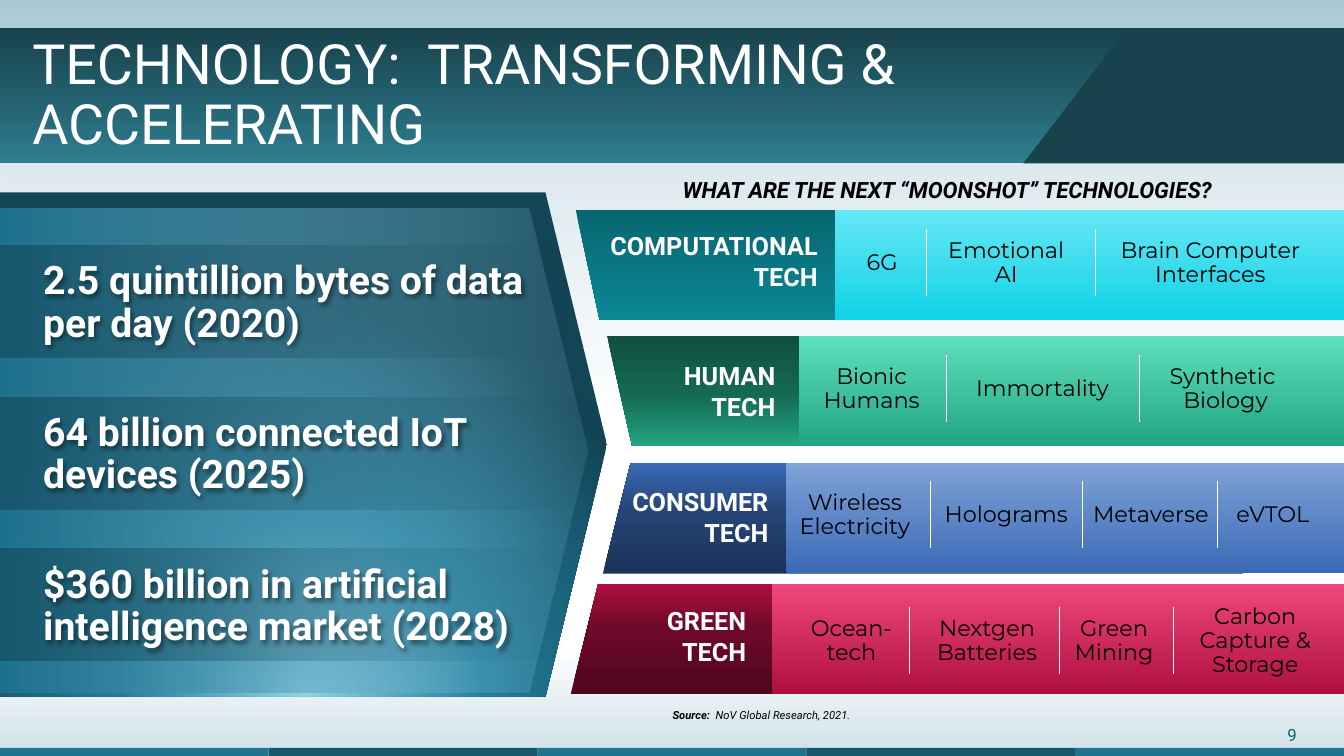
from dataclasses import dataclass

from lxml import etree
from pptx import Presentation
from pptx.dml.color import RGBColor
from pptx.enum import shapes, text
from pptx.oxml.ns import qn
from pptx.util import Inches, Pt

SHAPE = shapes.MSO_SHAPE
ALIGN = text.PP_ALIGN
ANCHOR = text.MSO_ANCHOR
WIDTH, HEIGHT = 13.33, 7.5


@dataclass(frozen=True)
class Theme:
    heading_font: str = "Roboto"
    idea_font: str = "Montserrat"
    white: str = "FFFFFF"
    black: str = "000000"
    accent: str = "086670"
    blue: str = "207390"
    deep_blue: str = "18566C"
    sky: str = "92D1E7"
    ocean: str = "237E9E"
    navy: str = "134556"
    stripe: str = "103A48"
    slate: str = "18424C"
    teal: str = "2E7D8F"
    title_size: float = 39.6
    fact_size: float = 28
    label_size: float = 18
    idea_size: float = 16
    number_size: float = 12
    source_size: float = 8


class SlideBuilder:
    def __init__(self, slide, theme):
        self.slide = slide
        self.theme = theme

    def paint(self, shape, fill, angle=270, focus=None):
        """Fill with one colour, or with (position, colour, opacity) stops."""
        shape.shadow.inherit = False
        shape.line.fill.background()
        if isinstance(fill, str):
            shape.fill.solid()
            shape.fill.fore_color.rgb = RGBColor.from_string(fill)
            return shape
        shape.fill.gradient()
        gradient = shape._element.spPr.find(qn("a:gradFill"))
        for child in list(gradient):
            gradient.remove(child)
        stops = etree.SubElement(gradient, qn("a:gsLst"))
        for position, color, *opacity in fill:
            stop = etree.SubElement(stops, qn("a:gs"), pos=str(position * 1000))
            value = etree.SubElement(stop, qn("a:srgbClr"), val=color)
            if opacity:
                etree.SubElement(value, qn("a:alpha"), val=str(opacity[0] * 1000))
        if focus:
            circle = etree.SubElement(gradient, qn("a:path"), path="circle")
            sides = {side: str(share * 1000) for side, share in zip("ltrb", focus)}
            etree.SubElement(circle, qn("a:fillToRect"), **sides)
        else:
            etree.SubElement(gradient, qn("a:lin"), ang=str(angle * 60000), scaled="0")
        return shape

    def block(self, kind, left, top, width, height, fill, adjust=None, flip=False, **gradient):
        shape = self.slide.shapes.add_shape(
            kind, Inches(left), Inches(top), Inches(width), Inches(height))
        if adjust is not None:
            shape.adjustments[0] = adjust
        if flip:
            shape._element.spPr.find(qn("a:xfrm")).set("flipV", "1")
        return self.paint(shape, fill, **gradient)

    def outline(self, points, fill):
        (left, top), *rest = [(Inches(x), Inches(y)) for x, y in points]
        builder = self.slide.shapes.build_freeform(left, top)
        builder.add_line_segments(rest, close=True)
        return self.paint(builder.convert_to_shape(), fill)

    def format(self, paragraph, size, color, font=None, bold=False, italic=False,
               align=ALIGN.LEFT, spacing=None, before=0):
        paragraph.alignment = align
        paragraph.space_before = Pt(before)
        if spacing:
            paragraph.line_spacing = spacing
        paragraph.font.name = font or self.theme.heading_font
        paragraph.font.size = Pt(size)
        paragraph.font.bold = bold
        paragraph.font.italic = italic
        paragraph.font.color.rgb = RGBColor.from_string(color)

    def text(self, left, top, width, height, lines, size, color, wrap=False,
             anchor=ANCHOR.TOP, inset=0.1, **style):
        box = self.slide.shapes.add_textbox(
            Inches(left), Inches(top), Inches(width), Inches(height))
        frame = box.text_frame
        frame.word_wrap = wrap
        frame.vertical_anchor = anchor
        frame.margin_left = Inches(inset)
        for index, line in enumerate(lines):
            paragraph = frame.paragraphs[0] if index == 0 else frame.add_paragraph()
            paragraph.text = line.replace("\n", "\v")
            self.format(paragraph, size, color, **style)
        return box

    def title(self, words, left, top, width, height):
        title = self.slide.shapes.title
        title.left, title.top = Inches(left), Inches(top)
        title.width, title.height = Inches(width), Inches(height)
        frame = title.text_frame
        frame.text = words
        frame.word_wrap = True
        frame.auto_size = text.MSO_AUTO_SIZE.NONE
        frame.vertical_anchor = ANCHOR.MIDDLE
        self.format(frame.paragraphs[0], self.theme.title_size, self.theme.white, spacing=0.9)
        # Bring the title in front of the banner
        title._element.getparent().append(title._element)

    def divider(self, x, top, height):
        line = self.slide.shapes.add_connector(
            shapes.MSO_CONNECTOR.STRAIGHT, Inches(x), Inches(top), Inches(x), Inches(top + height))
        line.line.color.rgb = RGBColor.from_string(self.theme.white)
        line.line.width = Pt(0.5)
        etree.SubElement(line._element.spPr, qn("a:effectLst"))

    def cast_text_shadow(self, box):
        effects = etree.SubElement(box._element.spPr, qn("a:effectLst"))
        shadow = etree.SubElement(effects, qn("a:outerShdw"), blurRad="38100", dist="38100",
                                  dir="2700000", algn="tl")
        color = etree.SubElement(shadow, qn("a:srgbClr"), val=self.theme.black)
        etree.SubElement(color, qn("a:alpha"), val="43000")


FACTS = [
    "2.5 quintillion bytes of data per day (2020)",
    "64 billion connected IoT devices (2025)",
    "$360 billion in artificial intelligence market (2028)",
]

# tab: left, top, width, adjustment, flipped; label: left, top, width; ideas: text, left, width
ROWS = [
    dict(tab=(5.71, 2.08, 7.11, 0.217, True), tab_fill=[(0, "086670"), (100, "0A8895")],
         label=("COMPUTATIONAL\nTECH", 5.88, 2.24, 2.33),
         band=8.28, band_fill=[(0, "10D2E7"), (100, "66E7F5")], dividers=[9.19, 10.86],
         ideas=[("6G", 8.48, 0.54), ("Emotional\nAI", 9.27, 1.42),
                ("Brain Computer\nInterfaces", 10.95, 2.11)]),
    dict(tab=(6.02, 3.33, 6.62, 0.228, True),
         tab_fill=[(0, "104E3E"), (52, "156953"), (100, "21A582")],
         label=("HUMAN\nTECH", 6.63, 3.53, 1.16),
         band=7.92, band_fill=[(0, "21A582"), (100, "5EDFBD")], dividers=[9.39, 11.3],
         ideas=[("Bionic\nHumans", 8.05, 1.19), ("Immortality", 9.53, 1.62),
                ("Synthetic \nBiology", 11.44, 1.43)]),
    dict(tab=(5.98, 4.59, 6.62, 0.25, False),
         tab_fill=[(0, "1C3358"), (55, "264476"), (100, "3A6AB6")],
         label=("CONSUMER\nTECH", 6.15, 4.78, 1.57),
         band=7.8, band_fill=[(0, "3A6AB6"), (100, "80A2D7")], dividers=[9.23, 10.74, 12.07],
         ideas=[("Wireless\nElectricity", 7.75, 1.46), ("Holograms", 9.22, 1.52),
                ("Metaverse", 10.68, 1.47), ("eVTOL", 12.12, 1.01)]),
    dict(tab=(5.66, 5.79, 6.63, 0.25, False),
         tab_fill=[(8, "53071F"), (61, "6F0929"), (100, "AF0F40")],
         label=("GREEN\nTECH", 6.51, 5.96, 0.99),
         band=7.66, band_fill=[(0, "AF0F40"), (100, "F0487C")], dividers=[9.02, 10.51, 11.64],
         ideas=[("Ocean-\ntech", 7.92, 1.05), ("Nextgen\nBatteries", 9.13, 1.32),
                ("Green\nMining", 10.55, 1), ("Carbon\nCapture &\nStorage", 11.73, 1.44)]),
]


def main():
    presentation = Presentation()
    presentation.slide_width, presentation.slide_height = Inches(WIDTH), Inches(HEIGHT)
    theme = Theme()
    page = SlideBuilder(presentation.slides.add_slide(presentation.slide_layouts[5]), theme)

    # Background washes, banner and footer strip
    page.block(SHAPE.RECTANGLE, 0, 6.35, WIDTH, 1.15,
               [(8, theme.blue, 0), (88, theme.blue, 18), (100, theme.blue, 22)], angle=90)
    page.block(SHAPE.RECTANGLE, 0, 0, WIDTH, 4.04,
               [(0, theme.blue, 0), (71, theme.blue, 18), (100, theme.blue, 39)])
    page.block(SHAPE.RECTANGLE, 0, 0.28, WIDTH, 1.34,
               [(0, theme.slate), (100, theme.teal)], angle=90)
    page.outline([(11.18, 0.28), (WIDTH, 0.28), (WIDTH, 1.62), (10.15, 1.62)], theme.slate)
    page.text(12.3, 7.14, 1.03, 0.3, ["9"], theme.number_size, theme.accent,
              wrap=True, align=ALIGN.CENTER)
    for index in range(5):
        color = theme.deep_blue if index % 2 else theme.blue
        page.block(SHAPE.RECTANGLE, index * WIDTH / 5, 7.42, WIDTH / 5, 0.1, color)
    page.title("TECHNOLOGY:  TRANSFORMING & ACCELERATING", 0.22, 0.31, 12.75, 1.3)

    # Category tabs
    for row in ROWS:
        left, top, width, adjust, flip = row["tab"]
        page.block(SHAPE.PARALLELOGRAM, left, top, width, 1.1, row["tab_fill"], adjust, flip)
        words, left, top, width = row["label"]
        page.text(left, top, width, 0.71, [words], theme.label_size, theme.white,
                  bold=True, align=ALIGN.RIGHT)

    # Facts arrow
    page.block(SHAPE.PENTAGON, 0, 1.91, 6.02, 5,
               [(0, theme.sky), (46, theme.ocean), (100, theme.navy)], 0.122,
               focus=(50, 130, 50, -30))
    page.block(SHAPE.PENTAGON, 0, 2.07, 5.83, 4.8,
               [(0, theme.blue, 100), (100, theme.sky, 12)], 0.122, angle=0)
    for index, width in enumerate([5.71, 6.01, 5.71]):
        page.block(SHAPE.PENTAGON, 0, 2.44 + 1.5 * index, width, 1.11,
                   [(0, theme.stripe, 46), (100, theme.stripe, 0)], 0.151, angle=0)
    facts = page.text(0.33, 2, 5.17, 5.03, FACTS, theme.fact_size, theme.white, wrap=True,
                      anchor=ANCHOR.MIDDLE, bold=True, spacing=0.9, before=48)
    page.cast_text_shadow(facts)

    # Moonshot ideas
    page.text(6.77, 1.7, 5.82, 0.37, ["WHAT ARE THE NEXT “MOONSHOT” TECHNOLOGIES?"],
              theme.idea_size, theme.black, wrap=True, inset=0, bold=True, italic=True)
    for index, row in enumerate(ROWS):
        page.block(SHAPE.RECTANGLE, row["band"], row["tab"][1], WIDTH - row["band"], 1.1,
                   row["band_fill"])
        offset = 1.25 * index
        for x in row["dividers"]:
            page.divider(x, 2.27 + offset, 0.67)
        for words, left, width in row["ideas"]:
            height = 0.1 + 0.245 * (words.count("\n") + 1)
            page.text(left, 2.62 + offset - height / 2, width, height, [words], theme.idea_size,
                      theme.black, font=theme.idea_font, align=ALIGN.CENTER, spacing=0.9)

    # Source line
    source = page.text(6.67, 6.98, 1.88, 0.24, ["Source:"], theme.source_size, theme.black,
                       inset=0, italic=True)
    paragraph = source.text_frame.paragraphs[0]
    paragraph.runs[0].font.bold = True
    paragraph.add_run().text = "  NoV Global Research, 2021."

    presentation.save("out.pptx")


if __name__ == "__main__":
    main()
